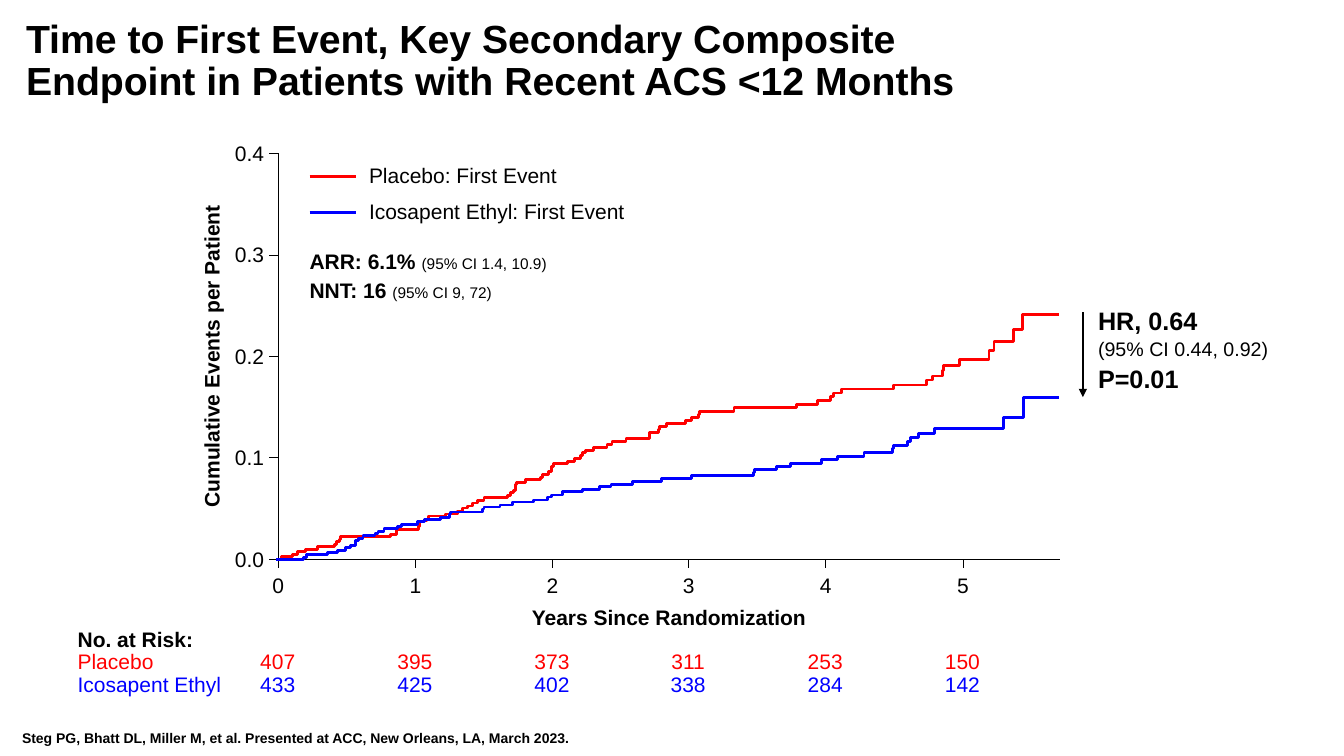
import pptx
import pptx.dml.color
import pptx.enum.shapes
import pptx.enum.text
import pptx.oxml
import pptx.oxml.ns
import pptx.util

PX = 9144
BLACK, RED, BLUE = "000000", "FF0000", "0000FF"
ALIGN = pptx.enum.text.PP_ALIGN
ANCHOR = pptx.enum.text.MSO_ANCHOR
ORIGIN_X, ORIGIN_Y = 276, 555
YEAR, TENTH = 135.8, 100.75

PLACEBO_STEPS = [
    (279, 552), (290, 550), (295, 547), (303, 545), (315, 542), (332, 540),
    (334, 537), (337, 535), (338, 532), (387, 530), (393, 525), (415, 522),
    (416, 517), (423, 515), (425, 512), (442, 510), (454, 507), (459, 504),
    (464, 502), (469, 499), (474, 497), (480, 494), (503, 492), (506, 489),
    (509, 487), (511, 481), (512, 479), (521, 476), (536, 474), (538, 471),
    (544, 468), (547, 463), (549, 460), (563, 458), (570, 455), (576, 452),
    (578, 449), (581, 447), (589, 444), (602, 441), (607, 438), (621, 435),
    (644, 429), (653, 426), (654, 423), (661, 420), (680, 417), (686, 414),
    (693, 411), (694, 408), (728, 404), (790, 401), (811, 397), (824, 393),
    (827, 390), (835, 386), (886, 382), (919, 377), (925, 373), (935, 368),
    (936, 363), (952, 357), (981, 348), (986, 339), (1005, 327), (1014, 312),
]
ETHYL_STEPS = [
    (301, 553), (304, 550), (325, 548), (335, 546), (343, 543), (348, 541),
    (353, 536), (356, 534), (360, 531), (372, 529), (375, 527), (381, 524),
    (394, 522), (398, 520), (414, 517), (421, 515), (437, 513), (446, 510),
    (447, 508), (479, 505), (480, 503), (496, 501), (508, 498), (529, 496),
    (543, 493), (547, 491), (558, 488), (578, 486), (595, 483), (606, 481),
    (627, 478), (656, 475), (686, 472), (747, 469), (748, 466), (770, 463),
    (784, 460), (815, 456), (831, 453), (857, 449), (885, 445), (886, 442),
    (900, 438), (903, 434), (911, 430), (927, 425), (995, 414), (1015, 394),
]
AT_RISK = [(407, 433), (395, 425), (373, 402), (311, 338), (253, 284), (150, 142)]


def rgb(color):
    return pptx.dml.color.RGBColor.from_string(color)


def set_font(font, size, bold, color):
    font.name = "Arial"
    font.size = pptx.util.Pt(size)
    font.bold = bold
    font.color.rgb = rgb(color)


def para(content, size=15, bold=False, color=BLACK, line=None, before=0):
    return content, size, bold, color, line, before


def add_text(sl, box, paras, align=ALIGN.LEFT, anchor=ANCHOR.TOP, wrap=True, inset=(0, 0), rotation=0):
    sp = sl.shapes.add_textbox(*[v * PX for v in box])
    sp.rotation = rotation
    tf = sp.text_frame
    tf.word_wrap = wrap
    tf.vertical_anchor = anchor
    tf.margin_left = tf.margin_right = inset[0] * PX
    tf.margin_top = tf.margin_bottom = inset[1] * PX
    for i, (content, size, bold, color, line, before) in enumerate(paras):
        p = tf.paragraphs[0] if i == 0 else tf.add_paragraph()
        p.alignment = align
        p.space_before = pptx.util.Pt(before)
        if line:
            p.line_spacing = line
        if isinstance(content, str):
            p.text = content
            set_font(p.font, size, bold, color)
        else:
            for run_text, run_size, run_bold in content:
                r = p.add_run()
                r.text = run_text
                set_font(r.font, run_size, run_bold, color)


def add_line(sl, x1, y1, x2, y2, color=BLACK, width=0.5, arrow=False):
    cx = sl.shapes.add_connector(
        pptx.enum.shapes.MSO_CONNECTOR.STRAIGHT, x1 * PX, y1 * PX, x2 * PX, y2 * PX)
    cx.line.color.rgb = rgb(color)
    cx.line.width = pptx.util.Pt(width)
    if arrow:
        tail = pptx.oxml.parse_xml(
            f'<a:tailEnd {pptx.oxml.ns.nsdecls("a")} type="triangle"/>')
        cx.line._get_or_add_ln().append(tail)
    effects = pptx.oxml.parse_xml(f'<a:effectLst {pptx.oxml.ns.nsdecls("a")}/>')
    cx._element.spPr.append(effects)


def add_outline(sl, points, color, width):
    builder = sl.shapes.build_freeform(*points[0], scale=PX)
    builder.add_line_segments(points[1:], close=False)
    sp = builder.convert_to_shape()
    sp.fill.background()
    sp.line.color.rgb = rgb(color)
    sp.line.width = pptx.util.Pt(width)
    sp.shadow.inherit = False


def add_step_curve(sl, steps, color):
    points = [(274, ORIGIN_Y)]
    for x, y in steps:
        points += [(x, points[-1][1]), (x, y)]
    points.append((1050, points[-1][1]))
    add_outline(sl, points, color, 2)


def add_axes(sl):
    add_outline(sl, [(ORIGIN_X, 152), (ORIGIN_X, ORIGIN_Y), (1051, ORIGIN_Y)], BLACK, 0.5)
    for tenth in range(5):
        y = round(ORIGIN_Y - TENTH * tenth)
        add_line(sl, ORIGIN_X, y, ORIGIN_X - 9, y)
        add_text(sl, (233, y - 13, 29, 25), [para(f"{tenth / 10:.1f}")], ALIGN.RIGHT, wrap=False)
    exact = pptx.util.Pt(16)
    for year, (placebo, ethyl) in enumerate(AT_RISK):
        x = round(ORIGIN_X + YEAR * year)
        add_line(sl, x, ORIGIN_Y, x, ORIGIN_Y + 9)
        add_text(sl, (x - 6, 568, 12, 25), [para(str(year))], ALIGN.CENTER, wrap=False)
        add_text(sl, (x - 43, 643, 85, 48),
                 [para(str(placebo), color=RED, line=exact), para(str(ethyl), color=BLUE, line=exact)],
                 ALIGN.CENTER, ANCHOR.BOTTOM)
    add_text(sl, (77, 622, 187, 69),
             [para("No. at Risk:", bold=True, line=exact),
              para("Placebo", color=RED, line=exact),
              para("Icosapent Ethyl", color=BLUE, line=exact)], anchor=ANCHOR.BOTTOM)
    add_text(sl, (494, 600, 339, 25), [para("Years Since Randomization", bold=True)], ALIGN.CENTER)
    add_text(sl, (58, 341, 303, 25), [para("Cumulative Events per Patient", bold=True)],
             ALIGN.CENTER, wrap=False, rotation=270)


def add_legend(sl):
    for y, name, color in [(175, "Placebo", RED), (211, "Icosapent Ethyl", BLUE)]:
        add_line(sl, 307, y, 353, y, color, 2)
        add_text(sl, (366, y - 15, 318, 27), [para(f"{name}: First Event", before=1)], inset=(0, 1))


def add_statistics(sl):
    for y, label, interval in [(247, "ARR: 6.1% ", "(95% CI 1.4, 10.9)"),
                               (275, "NNT: 16 ", "(95% CI 9, 72)")]:
        add_text(sl, (307, y, 237, 25), [para([(label, 15, True), (interval, 11, False)])], wrap=False)
    add_text(sl, (1089, 312, 235, 78),
             [para("HR, 0.64", 18, True, line=pptx.util.Pt(13.7), before=1.2),
              para("(95% CI 0.44, 0.92)", 14, line=pptx.util.Pt(18)),
              para("P=0.01", 18, True, before=1.4)], inset=(0, 2))
    add_line(sl, 1074, 310, 1074, 394, width=1.5, arrow=True)


def main():
    prs = pptx.Presentation()
    prs.slide_width, prs.slide_height = 1333 * PX, 750 * PX
    sl = prs.slides.add_slide(prs.slide_layouts[6])
    title = ("Time to First Event, Key Secondary Composite\v"
             "Endpoint in Patients with Recent ACS <12 Months")
    add_text(sl, (16, 12, 1283, 98), [para(title, 28, True, line=0.9)],
             anchor=ANCHOR.MIDDLE, inset=(10, 5))
    add_axes(sl)
    add_legend(sl)
    add_statistics(sl)
    add_step_curve(sl, PLACEBO_STEPS, RED)
    add_step_curve(sl, ETHYL_STEPS, BLUE)
    citation = "Steg PG, Bhatt DL, Miller M, et al. Presented at ACC, New Orleans, LA, March 2023."
    add_text(sl, (12, 718, 711, 27), [para(citation, 10, True)],
             anchor=ANCHOR.BOTTOM, inset=(10, 5))
    prs.save("out.pptx")


if __name__ == "__main__":
    main()
